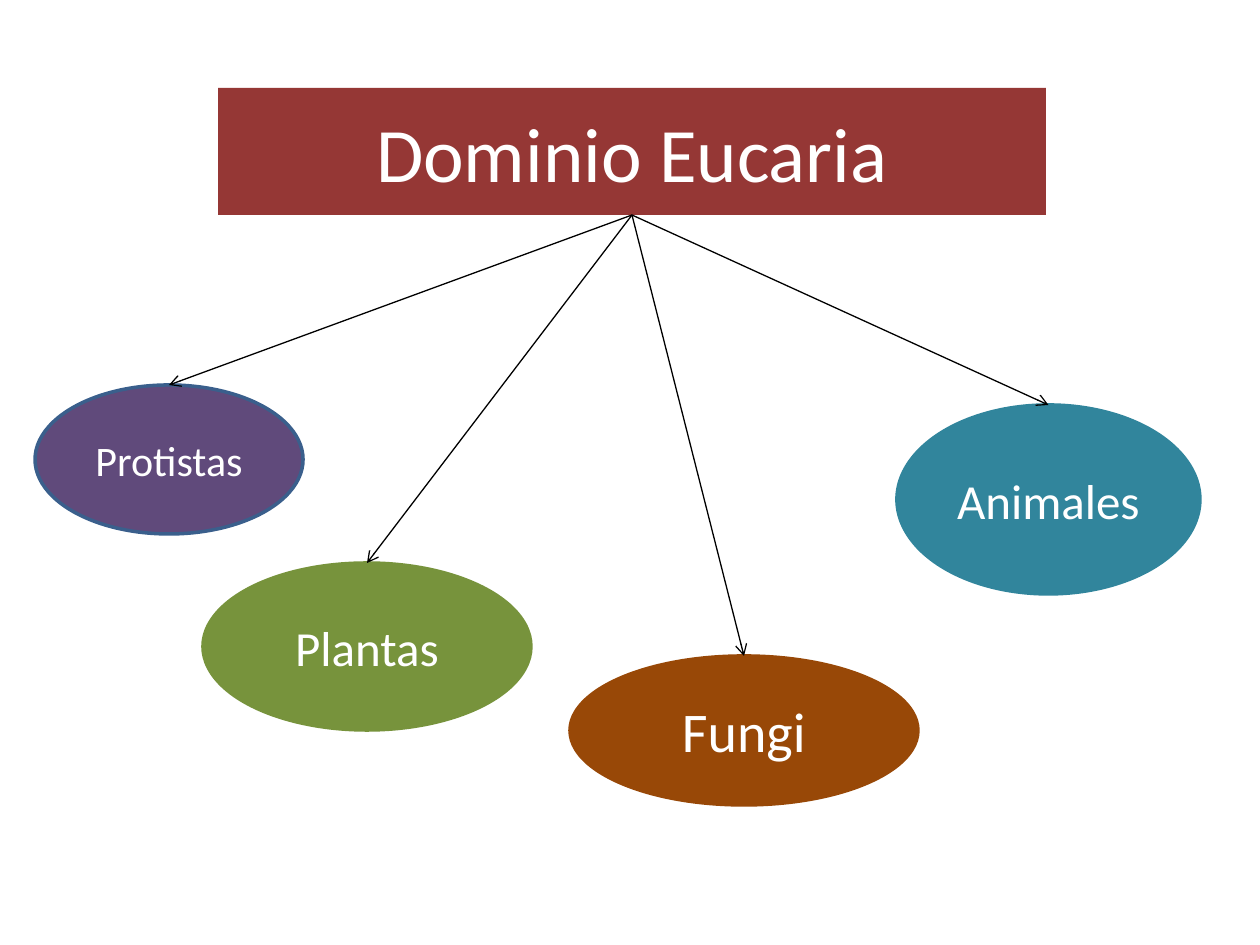
from dataclasses import dataclass
from lxml.etree import SubElement
from pptx import Presentation
from pptx.dml.color import RGBColor
from pptx.enum.shapes import MSO_CONNECTOR, MSO_SHAPE
from pptx.enum.text import MSO_ANCHOR, PP_ALIGN
from pptx.oxml.ns import qn
from pptx.util import Pt

SCALE = 914400 / 126


@dataclass(frozen=True)
class Theme:
    font: str = "Calibri"
    text: str = "FFFFFF"
    arrow: str = "000000"
    red: str = "953735"
    violet: str = "604A7B"
    blue: str = "3A5F8C"
    brown: str = "984807"
    green: str = "77933C"
    teal: str = "31859C"
    title: int = 44
    large: int = 32
    medium: int = 28
    small: int = 24
    edge: float = 2
    thin: float = 0.75


THEME = Theme()


def px(size):
    return round(size * SCALE)


def color(code):
    return RGBColor.from_string(code)


def add_node(slide, kind, box, label, size, fill, edge=None):
    node = slide.shapes.add_shape(kind, *map(px, box))
    node.shadow.inherit = False
    node.fill.solid()
    node.fill.fore_color.rgb = color(fill)
    if edge:
        node.line.color.rgb = color(edge)
        node.line.width = Pt(THEME.edge)
    else:
        node.line.fill.background()
    frame = node.text_frame
    frame.word_wrap = True
    frame.vertical_anchor = MSO_ANCHOR.MIDDLE
    para = frame.paragraphs[0]
    para.text = label
    para.alignment = PP_ALIGN.CENTER
    para.font.name = THEME.font
    para.font.size = Pt(size)
    para.font.color.rgb = color(THEME.text)
    return node


def add_arrow(slide, start, end):
    arrow = slide.shapes.add_connector(MSO_CONNECTOR.STRAIGHT, 0, 0, 0, 0)
    arrow.begin_connect(start, 2)
    arrow.end_connect(end, 0)
    arrow.line.color.rgb = color(THEME.arrow)
    arrow.line.width = Pt(THEME.thin)
    props = arrow.element.spPr
    SubElement(props.find(qn("a:ln")), qn("a:tailEnd"), type="arrow")
    SubElement(props, qn("a:effectLst"))


def main():
    deck = Presentation()
    deck.slide_width, deck.slide_height = px(1260), px(945)
    slide = deck.slides.add_slide(deck.slide_layouts[6])
    title = add_node(slide, MSO_SHAPE.RECTANGLE, (218, 88, 828, 127),
                     "Dominio Eucaria", THEME.title, THEME.red)
    kingdoms = [
        ("Protistas", (35, 385, 268, 149), THEME.small, THEME.violet, THEME.blue),
        ("Fungi", (570, 656, 348, 149), THEME.large, THEME.brown, THEME.brown),
        ("Plantas", (203, 563, 328, 167), THEME.medium, THEME.green, THEME.green),
        ("Animales", (897, 405, 303, 189), THEME.medium, THEME.teal, THEME.teal),
    ]
    nodes = [add_node(slide, MSO_SHAPE.OVAL, box, label, size, fill, edge)
             for label, box, size, fill, edge in kingdoms]
    for node in sorted(nodes, key=lambda item: item.left):
        add_arrow(slide, title, node)
    deck.save("out.pptx")


if __name__ == "__main__":
    main()
